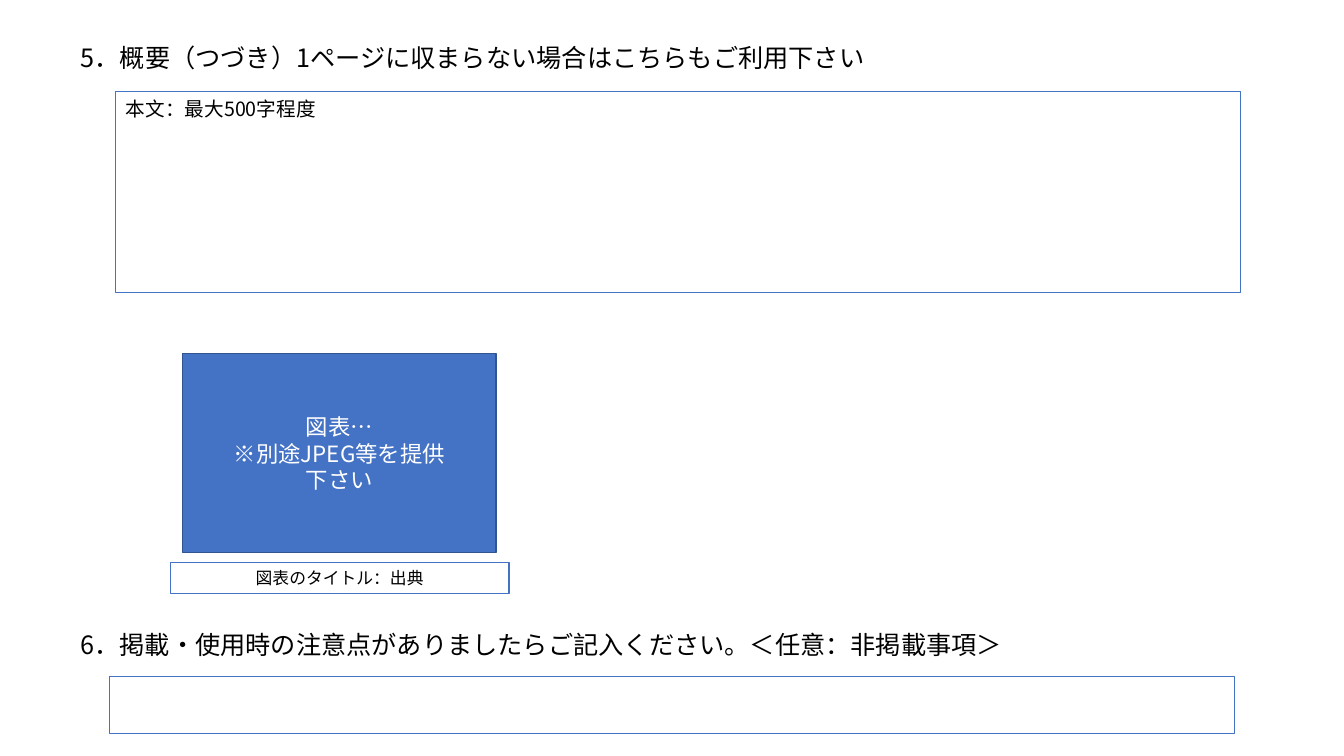
import pptx
import pptx.dml.color
import pptx.enum.shapes
import pptx.enum.text
import pptx.util

FONT = "Noto Sans CJK JP"
COLORS = {"ink": "000000", "paper": "FFFFFF", "blue": "4472C4", "edge": "325491"}
ALIGN = pptx.enum.text.PP_ALIGN
ANCHOR = pptx.enum.text.MSO_ANCHOR


def color(name):
    return pptx.dml.color.RGBColor.from_string(COLORS[name])


def write(frame, text, size=18, ink="ink", align=ALIGN.LEFT, anchor=ANCHOR.TOP, wrap=True):
    """Fill a text frame, one paragraph per line of text."""
    frame.text = text
    frame.word_wrap = wrap
    frame.auto_size = pptx.enum.text.MSO_AUTO_SIZE.NONE
    frame.vertical_anchor = anchor
    for para in frame.paragraphs:
        para.alignment = align
        para.line_spacing = pptx.util.Pt(size * 1.2)
        for run in para.runs:
            run.font.size = pptx.util.Pt(size)
            run.font.name = FONT
            run.font.color.rgb = color(ink)
            props = run.font._element
            east = props.makeelement(pptx.oxml.ns.qn("a:ea"), {"typeface": FONT})
            props.find(pptx.oxml.ns.qn("a:latin")).addnext(east)


class Form:
    """Places elements by percent shares of the slide's width and height."""

    def __init__(self, deck):
        self.wide, self.high = deck.slide_width, deck.slide_height
        self.slide = deck.slides.add_slide(deck.slide_layouts.get_by_name("Title Only"))

    def area(self, left, top, width, height):
        sides = (self.wide, self.high) * 2
        return [round(side * share / 100)
                for side, share in zip(sides, (left, top, width, height))]

    def title(self, text, *place):
        shape = self.slide.shapes.title
        shape.left, shape.top, shape.width, shape.height = self.area(*place)
        write(shape.text_frame, text, wrap=False)

    def head(self, text, *place):
        shape = self.slide.shapes.add_textbox(*self.area(*place))
        write(shape.text_frame, text, wrap=False)

    def box(self, text, *place, fill=None, line="blue", weight=0.75, **style):
        kind = pptx.enum.shapes.MSO_SHAPE.RECTANGLE
        shape = self.slide.shapes.add_shape(kind, *self.area(*place))
        shape.shadow.inherit = False
        if fill:
            shape.fill.solid()
            shape.fill.fore_color.rgb = color(fill)
        else:
            shape.fill.background()
        shape.line.color.rgb = color(line)
        shape.line.width = pptx.util.Pt(weight)
        write(shape.text_frame, text, **style)


def main():
    deck = pptx.Presentation()
    deck.slide_width = pptx.util.Inches(13.33)
    deck.slide_height = pptx.util.Inches(7.5)
    form = Form(deck)
    left, span = 5.25, 83.65

    form.title("5．概要（つづき）1ページに収まらない場合はこちらもご利用下さい",
               left, 4.93, 63.3, 5.33)
    form.box("本文：最大500字程度", 8.63, 12.13, span, 26.53, size=14)
    form.box("図表…\n※別途JPEG等を提供\n下さい", 13.58, 46.8, 23.33, 26.27,
             fill="blue", line="edge", weight=1, size=16, ink="paper",
             align=ALIGN.CENTER, anchor=ANCHOR.MIDDLE)
    form.box("図表のタイトル：出典", 12.68, 74.4, 25.2, 4.1, size=12, align=ALIGN.CENTER)
    form.head("6．掲載・使用時の注意点がありましたらご記入ください。＜任意：非掲載事項＞",
              left, 82.53, 78.85, 5.33)
    form.box("", 8.18, 89.47, span, 7.6)
    deck.save("out.pptx")


if __name__ == "__main__":
    main()
